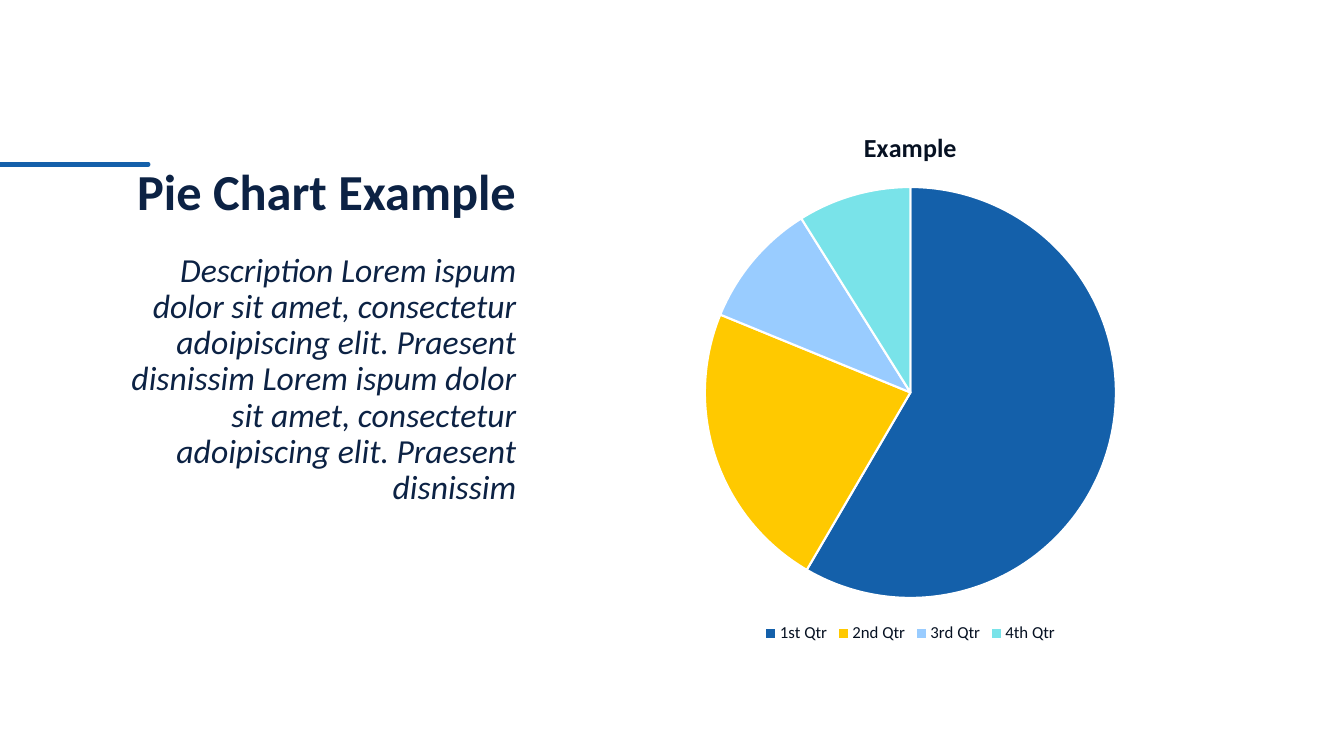
from lxml.etree import SubElement
from pptx import Presentation
from pptx.chart.data import CategoryChartData
from pptx.dml.color import RGBColor
from pptx.enum.chart import XL_CHART_TYPE as ChartType, XL_LEGEND_POSITION as LegendPos
from pptx.enum.shapes import MSO_CONNECTOR as Connector
from pptx.enum.text import MSO_ANCHOR as Anchor, MSO_AUTO_SIZE as AutoSize, PP_ALIGN as Align
from pptx.oxml.ns import qn
from pptx.util import Inches, Pt

TITLE = "Pie Chart Example"
SENTENCE = "Lorem ispum dolor sit amet, consectetur adoipiscing elit. Praesent disnissim"
DESCRIPTION = f"Description {SENTENCE} {SENTENCE}"
CHART_TITLE = "Example"
SERIES = "Series 1"
QUARTERS = [
    ("1st Qtr", 59, "blue"),
    ("2nd Qtr", 23, "yellow"),
    ("3rd Qtr", 10, "sky"),
    ("4th Qtr", 9, "aqua"),
]
COLORS = {
    "navy": "0C2244", "ink": "061122", "white": "FFFFFF", "blue": "1460AA",
    "yellow": "FFC900", "sky": "99CCFF", "aqua": "79E3E9",
}
FONT = "Calibri"
TEXT_LEFT, TEXT_WIDTH = 0.92, 4.3


def rgb(name):
    return RGBColor.from_string(COLORS[name])


def style_font(font, size, color, bold=False, italic=False):
    font.name, font.size = FONT, Pt(size)
    font.bold, font.italic = bold, italic
    font.color.rgb = rgb(color)


def write(tf, text, size, color="navy", align=None, spacing=None, **style):
    p = tf.paragraphs[0]
    if align is not None:
        p.alignment = align
    if spacing is not None:
        p.line_spacing = spacing
    p.space_before = Pt(0)
    r = p.add_run()
    r.text = text
    style_font(r.font, size, color, **style)
    return p


def fill_placeholder(sp, top, height, anchor, text, size, **style):
    sp.left, sp.top = Inches(TEXT_LEFT), Inches(top)
    sp.width, sp.height = Inches(TEXT_WIDTH), Inches(height)
    tf = sp.text_frame
    tf.word_wrap, tf.auto_size, tf.vertical_anchor = True, AutoSize.NONE, anchor
    return write(tf, text, size, align=Align.RIGHT, spacing=0.9, **style)


def add_accent(s):
    line = s.shapes.add_connector(Connector.STRAIGHT, 0, Inches(1.63), Inches(1.47), Inches(1.63))
    line.line.color.rgb = rgb("blue")
    line.line.width = Pt(3.25)
    line.line._get_or_add_ln().set("cap", "rnd")
    SubElement(line._element.spPr, qn("a:effectLst"))


def add_pie(s):
    data = CategoryChartData()
    data.categories = [name for name, _, _ in QUARTERS]
    data.add_series(SERIES, [value for _, value, _ in QUARTERS])
    chart = s.shapes.add_chart(
        ChartType.PIE, Inches(5.65), Inches(1.08), Inches(6.76), Inches(5.34), data
    ).chart
    style_font(chart.font, 10, "ink")
    chart.has_title = True
    write(chart.chart_title.text_frame, CHART_TITLE, 18.6, "ink", bold=True)
    chart.chart_title.include_in_layout = False
    chart.has_legend = True
    chart.legend.position = LegendPos.BOTTOM
    chart.legend.include_in_layout = False
    style_font(chart.legend.font, 12, "ink")
    plot = chart.plots[0]
    plot.vary_by_categories = True
    for i, (_, _, color) in enumerate(QUARTERS):
        slice_format = plot.series[0].points[i].format
        slice_format.fill.solid()
        slice_format.fill.fore_color.rgb = rgb(color)
        slice_format.line.color.rgb = rgb("white")
        slice_format.line.width = Pt(1.5)


def main():
    prs = Presentation()
    prs.slide_width, prs.slide_height = Inches(13.33), Inches(7.5)
    s = prs.slides.add_slide(prs.slide_layouts[1])
    s.background.fill.solid()
    s.background.fill.fore_color.rgb = rgb("white")
    add_accent(s)
    add_pie(s)
    fill_placeholder(s.shapes.title, 0.5, 1.75, Anchor.BOTTOM, TITLE, 36, bold=True)
    p = fill_placeholder(s.placeholders[1], 2.46, 3.96, Anchor.TOP, DESCRIPTION, 24, italic=True)
    pPr = p._p.get_or_add_pPr()
    pPr.set("marL", "0")
    pPr.set("indent", "0")
    SubElement(pPr, qn("a:buNone"))
    prs.save("out.pptx")


if __name__ == "__main__":
    main()
